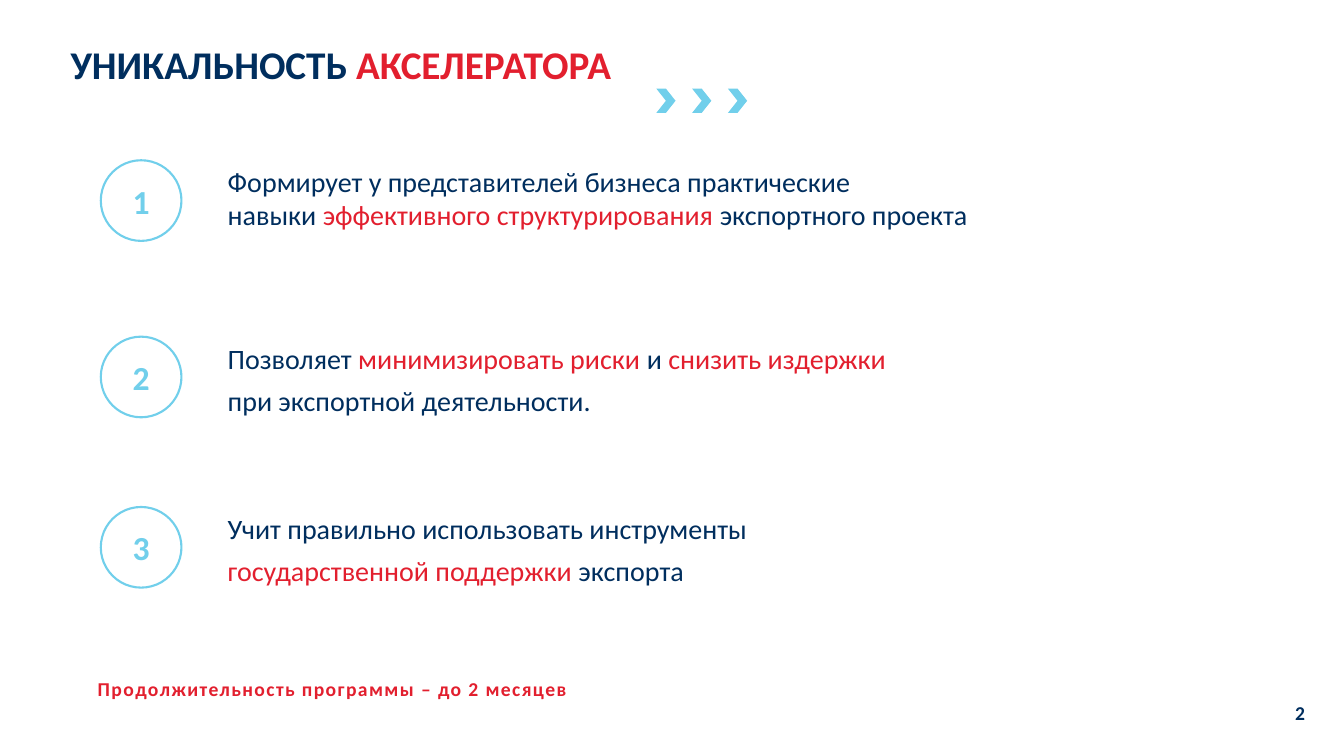
from pptx import Presentation
from pptx import util as u
from pptx.dml.color import RGBColor
from pptx.enum import shapes, text

THEME = {
    "font": "Calibri",
    "navy": RGBColor(0x00, 0x2E, 0x5E),
    "red": RGBColor(0xE2, 0x1F, 0x2E),
    "sky": RGBColor(0x71, 0xCF, 0xEB),
    "title": u.Pt(28), "number": u.Pt(24), "body": u.Pt(20), "small": u.Pt(14),
}
NO_INSETS = dict.fromkeys(
    ("margin_left", "margin_top", "margin_right", "margin_bottom"), 0)


def apply(target, formats):
    for key, value in formats.items():
        setattr(target, key, value)


def write(paragraph, pieces, size, bold=False):
    """Add (wording, colour name) pieces to a paragraph."""
    for wording, colour in pieces:
        run = paragraph.add_run()
        run.text = wording
        apply(run.font, {"name": THEME["font"], "size": THEME[size], "bold": bold})
        run.font.color.rgb = THEME[colour]


deck = Presentation()
deck.slide_width, deck.slide_height = u.Inches(13.33), u.Inches(7.5)
slide = deck.slides.add_slide(deck.slide_layouts[5])

# Heading
heading = slide.shapes.title
apply(heading, {"left": u.Inches(0.7), "top": u.Inches(0.42),
                "width": u.Inches(10.4), "height": u.Inches(0.45)})
apply(heading.text_frame, {**NO_INSETS, "word_wrap": True,
                           "auto_size": text.MSO_AUTO_SIZE.NONE,
                           "vertical_anchor": text.MSO_ANCHOR.BOTTOM})
heading_line = heading.text_frame.paragraphs[0]
apply(heading_line, {"alignment": text.PP_ALIGN.LEFT, "line_spacing": u.Pt(37)})
write(heading_line, [("УНИКАЛЬНОСТЬ ", "navy"), ("АКСЕЛЕРАТОРА", "red")], "title", True)

# Chevrons after the heading
for step in range(3):
    chevron = slide.shapes.add_shape(
        shapes.MSO_SHAPE.CHEVRON, u.Inches(6.51 + 0.355 * step), u.Inches(0.88),
        u.Inches(0.19), u.Inches(0.24))
    chevron.shadow.inherit = False
    chevron.fill.solid()
    chevron.fill.fore_color.rgb = THEME["sky"]
    chevron.line.fill.background()

# Numbered benefits: circle top, text top, width, height, space after, lines
benefits = [
    (1.59, 1.58, 8.69, 0.77, 0, [
        [("Формирует у представителей бизнеса практические", "navy")],
        [("навыки ", "navy"), ("эффективного структурирования ", "red"),
         ("экспортного проекта", "navy")]]),
    (3.34, 3.34, 8.69, 0.86, 6, [
        [("Позволяет ", "navy"), ("минимизировать риски ", "red"),
         ("и ", "navy"), ("снизить издержки", "red")],
        [("при экспортной деятельности.", "navy")]]),
    (5.03, 5.03, 9.58, 0.86, 6, [
        [("Учит правильно использовать инструменты", "navy")],
        [("государственной поддержки ", "red"), ("экспорта", "navy")]]),
]
for number, (circle_top, top, width, height, gap, lines) in enumerate(benefits, 1):
    circle = slide.shapes.add_shape(
        shapes.MSO_SHAPE.OVAL, u.Inches(1), u.Inches(circle_top),
        u.Inches(0.8), u.Inches(0.8))
    circle.shadow.inherit = False
    circle.fill.background()
    circle.line.color.rgb = THEME["sky"]
    circle.line.width = u.Pt(1.5)
    circle.text_frame.vertical_anchor = text.MSO_ANCHOR.MIDDLE
    digit = circle.text_frame.paragraphs[0]
    digit.alignment = text.PP_ALIGN.CENTER
    write(digit, [(str(number), "sky")], "number", True)

    benefit = slide.shapes.add_textbox(
        u.Inches(2.16), u.Inches(top), u.Inches(width), u.Inches(height)).text_frame
    apply(benefit, {"word_wrap": True, "auto_size": text.MSO_AUTO_SIZE.SHAPE_TO_FIT_TEXT})
    for index, pieces in enumerate(lines):
        line = benefit.add_paragraph() if index else benefit.paragraphs[0]
        apply(line, {"alignment": text.PP_ALIGN.JUSTIFY, "space_after": u.Pt(gap)})
        write(line, pieces, "body")

# Programme length, with letters set 1 pt apart
duration = slide.shapes.add_textbox(
    u.Inches(0.87), u.Inches(6.67), u.Inches(5.15), u.Inches(0.34)).text_frame
apply(duration, {"word_wrap": False, "auto_size": text.MSO_AUTO_SIZE.SHAPE_TO_FIT_TEXT})
duration_line = duration.paragraphs[0]
write(duration_line, [("Продолжительность программы – до 2 месяцев", "red")], "small", True)
duration_line.runs[0].font._element.set("spc", "100")

# Page number
page = slide.shapes.add_textbox(
    u.Inches(12.69), u.Inches(6.95), u.Inches(0.41), u.Inches(0.38)).text_frame
apply(page, {**NO_INSETS, "word_wrap": True})
page.paragraphs[0].alignment = text.PP_ALIGN.CENTER
write(page.paragraphs[0], [("2", "navy")], "small", True)

deck.save("out.pptx")
